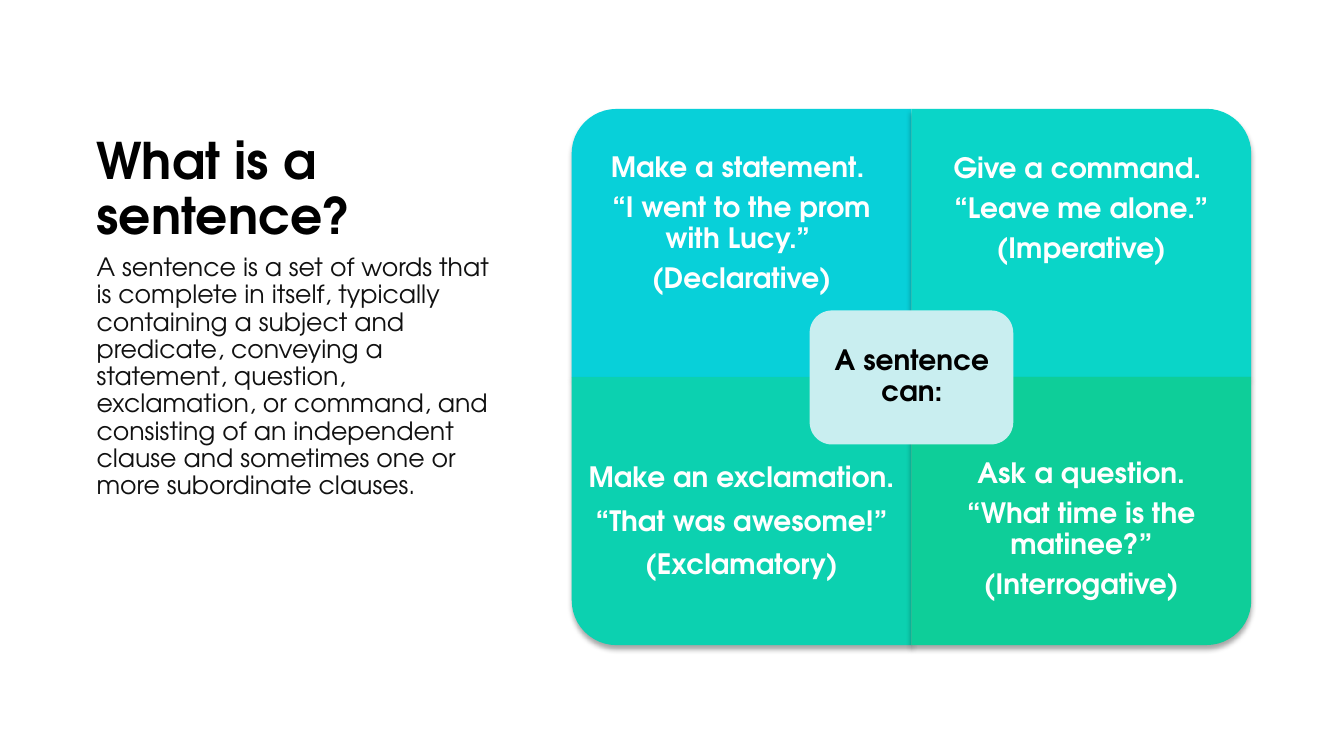
from lxml import etree
from pptx import Presentation
from pptx.dml import color
from pptx.enum import shapes, text
from pptx.oxml import ns
from pptx.util import Inches, Pt

FONT = "TeX Gyre Adventor"
LEFT, TOP, WIDTH, HEIGHT = 5.67, 1.08, 3.37, 2.66
LABEL_HEIGHT = 2

presentation = Presentation()
presentation.slide_width = Inches(13.33)
presentation.slide_height = Inches(7.5)
slide = presentation.slides.add_slide(presentation.slide_layouts[6])


def add_text(lines, left, top, width, height, size=20, hex_color="FFFFFF", bold=True,
             align=text.PP_ALIGN.CENTER, anchor=text.MSO_ANCHOR.TOP,
             inset=(0.16, 0.16), line_spacing=0.9):
    box = slide.shapes.add_textbox(Inches(left), Inches(top), Inches(width), Inches(height))
    frame = box.text_frame
    frame.word_wrap = True
    frame.vertical_anchor = anchor
    frame.margin_left = frame.margin_right = Inches(inset[0])
    frame.margin_top = frame.margin_bottom = Inches(inset[1])
    for index, line in enumerate(lines):
        paragraph = frame.paragraphs[0] if index == 0 else frame.add_paragraph()
        paragraph.alignment = align
        paragraph.line_spacing = line_spacing
        if index:
            paragraph.space_before = Pt(7)
        run = paragraph.add_run()
        run.text = line
        run.font.name = FONT
        run.font.size = Pt(size)
        run.font.bold = bold
        run.font.color.rgb = color.RGBColor.from_string(hex_color)


def add_panel(preset, left, top, width, height, fill, rotation=0, shadow=False):
    panel = slide.shapes.add_shape(preset, Inches(left), Inches(top), Inches(width), Inches(height))
    panel.adjustments[0] = 0.167
    panel.rotation = rotation
    panel.fill.solid()
    panel.fill.fore_color.rgb = color.RGBColor.from_string(fill)
    panel.line.fill.background()
    panel.shadow.inherit = False
    if shadow:
        effects = panel.element.spPr.find(ns.qn("a:effectLst"))
        outer = etree.SubElement(effects, ns.qn("a:outerShdw"), blurRad=str(Pt(4)),
                                 dist=str(Pt(3)), dir="5400000", rotWithShape="0")
        black = etree.SubElement(outer, ns.qn("a:srgbClr"), val="000000")
        etree.SubElement(black, ns.qn("a:alpha"), val="35000")


add_text(["What is a sentence?"], 0.86, 1.08, 4.71, 1.4, size=36, hex_color="000000",
         align=text.PP_ALIGN.LEFT, anchor=text.MSO_ANCHOR.BOTTOM, inset=(0.1, 0.05))

quadrants = [
    (0, 0, 270, "08D0D9", text.MSO_ANCHOR.BOTTOM, 0.9,
     ["Make a statement. ", "“I went to the prom with Lucy.” ", "(Declarative)"]),
    (1, 0, 0, "0AD5C8", text.MSO_ANCHOR.MIDDLE, 0.9,
     ["Give a command. ", "“Leave me alone.”", "(Imperative)"]),
    (0, 1, 180, "0CD1B0", text.MSO_ANCHOR.TOP, 1.0,
     ["Make an exclamation.", "“That was awesome!”", "(Exclamatory)"]),
    (1, 1, 90, "0ECE99", text.MSO_ANCHOR.TOP, 0.9,
     ["Ask a question.", "“What time is the matinee?”", "(Interrogative)"]),
]
for column, row, rotation, fill, anchor, line_spacing, lines in quadrants:
    left = LEFT + column * WIDTH
    top = TOP + row * HEIGHT
    width, height = (HEIGHT, WIDTH) if rotation % 180 else (WIDTH, HEIGHT)
    add_panel(shapes.MSO_SHAPE.ROUND_1_RECTANGLE, left + (WIDTH - width) / 2,
              top + (HEIGHT - height) / 2, width, height, fill, rotation, shadow=True)
    add_text(lines, left, top + row * (HEIGHT - LABEL_HEIGHT), WIDTH, LABEL_HEIGHT,
             anchor=anchor, line_spacing=line_spacing)

add_panel(shapes.MSO_SHAPE.ROUNDED_RECTANGLE, 8.03, 3.08, 2.02, 1.33, "C9EEF0")
add_text(["A sentence can:"], 8.1, 3.14, 1.89, 1.2, hex_color="000000",
         anchor=text.MSO_ANCHOR.MIDDLE, inset=(0.08, 0.08))

definition = (
    "A sentence is a set of words that is complete in itself, typically containing "
    "a subject and predicate, conveying a statement, question, exclamation, or command, "
    "and consisting of an independent clause and sometimes one or more subordinate clauses."
)
add_text([definition], 0.86, 2.48, 4.3, 2.87, size=18, hex_color="111111", bold=False,
         align=text.PP_ALIGN.LEFT, inset=(0.1, 0.05))

presentation.save("out.pptx")
